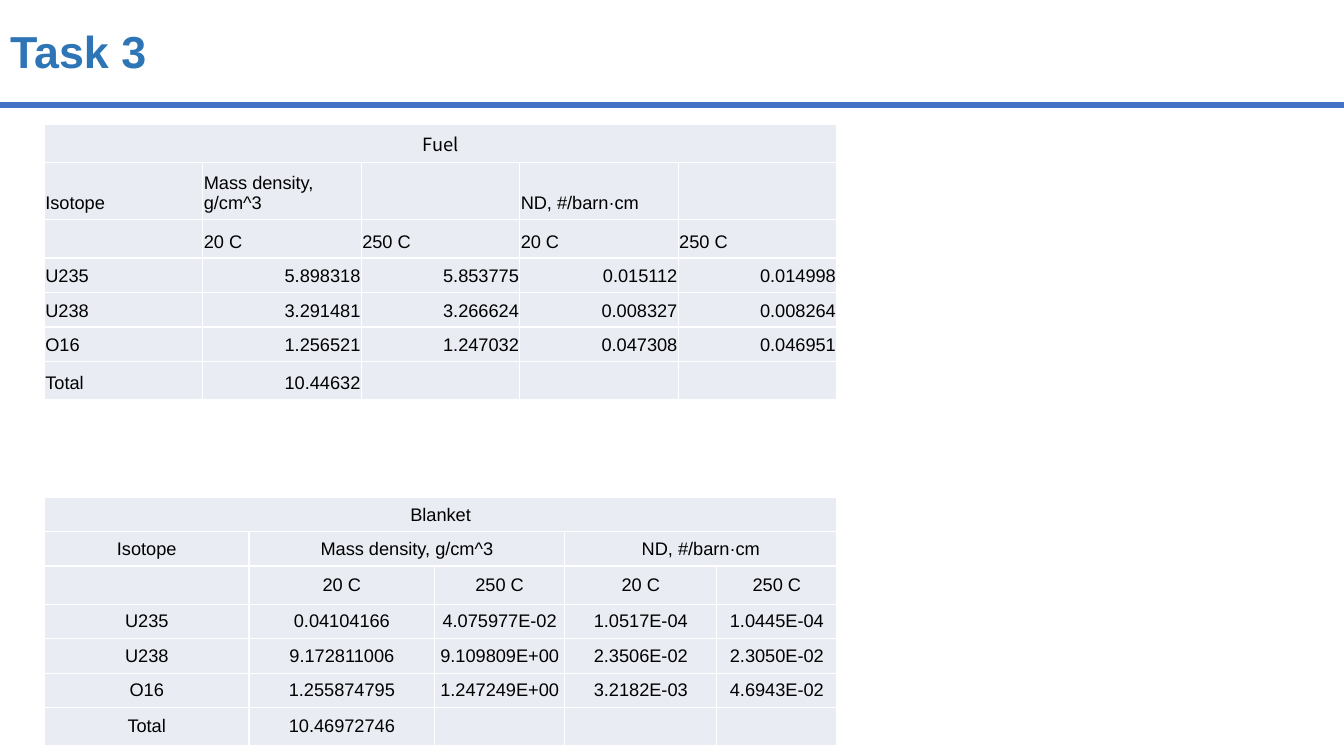
from lxml import etree
from pptx import Presentation
from pptx.dml.color import RGBColor
from pptx.enum.shapes import MSO_CONNECTOR
from pptx.enum.text import MSO_ANCHOR as Anchor, MSO_AUTO_SIZE, PP_ALIGN as Align
from pptx.oxml import parse_xml
from pptx.oxml.ns import nsdecls, qn
from pptx.util import Inches, Pt


def color(value):
    return RGBColor.from_string(value)


def style_cell(cell, text, align, anchor, font_name):
    """Write the text and apply the pale fill and thin white borders."""
    cell.margin_left = cell.margin_right = Inches(0.01)
    cell.margin_top = cell.margin_bottom = Inches(0.06)
    cell.vertical_anchor = anchor
    paragraph = cell.text_frame.paragraphs[0]
    if text:
        paragraph.text = text
    paragraph.alignment = align
    paragraph.font.size = Pt(13)
    paragraph.font.name = font_name
    paragraph.font.color.rgb = color("000000")
    properties = cell._tc.get_or_add_tcPr()
    for side in ("lnL", "lnR", "lnT", "lnB"):
        properties.append(parse_xml(
            f'<a:{side} {nsdecls("a")} w="{Pt(0.96)}"><a:solidFill>'
            f'<a:srgbClr val="FFFFFF"/></a:solidFill></a:{side}>'))
    cell.fill.solid()
    cell.fill.fore_color.rgb = color("E9ECF3")


presentation = Presentation()
presentation.slide_width = Inches(13.33)
presentation.slide_height = Inches(7.5)
slide = presentation.slides.add_slide(presentation.slide_layouts[5])

title = slide.shapes.title
title.left, title.top = Inches(0), Inches(0.29)
title.width, title.height = Inches(10), Inches(0.58)
title.text_frame.text = "Task 3"
title.text_frame.auto_size = MSO_AUTO_SIZE.NONE
title.text_frame.vertical_anchor = Anchor.TOP
heading = title.text_frame.paragraphs[0]
heading.alignment = Align.LEFT
heading.line_spacing = 0.8
heading.space_before = Pt(10)
heading.font.size = Pt(32)
heading.font.bold = True
heading.font.name = "Arial"
heading.font.color.rgb = color("2E75B6")

rule = slide.shapes.add_connector(
    MSO_CONNECTOR.STRAIGHT, Inches(0), Inches(1.04), Inches(13.33), Inches(1.04))
rule.line.color.rgb = color("4472C4")
rule.line.width = Pt(4.5)
etree.SubElement(rule._element.spPr, qn("a:effectLst"))

row_height = 2.4 / 7
headers = [
    ["Isotope", "Mass density, g/cm^3", "", "ND, #/barn·cm", ""],
    ["", "20 C", "250 C", "20 C", "250 C"],
]
blanket = {
    "name": "Blanket", "title_font": "Arial", "top": 4.93,
    "columns": [2.03, 1.84, 1.29, 1.51, 1.19],
    "heights": [row_height] * 2 + [0.38] + [row_height] * 3 + [0.37],
    "anchor": Anchor.MIDDLE, "label_align": Align.CENTER, "value_align": Align.CENTER,
    "header_spans": [(1, 2), (3, 4)],
    "values": [
        ["U235", "0.04104166", "4.075977E-02", "1.0517E-04", "1.0445E-04"],
        ["U238", "9.172811006", "9.109809E+00", "2.3506E-02", "2.3050E-02"],
        ["O16", "1.255874795", "1.247249E+00", "3.2182E-03", "4.6943E-02"],
        ["Total", "10.46972746", "", "", ""],
    ],
}
fuel = {
    "name": "Fuel", "title_font": "Noto Sans CJK SC", "top": 1.23,
    "columns": [7.86 / 5] * 5,
    "heights": [0.38, 0.57, 0.38] + [row_height] * 3 + [0.38],
    "anchor": Anchor.BOTTOM, "label_align": Align.LEFT, "value_align": Align.RIGHT,
    "header_spans": [],
    "values": [
        ["U235", "5.898318", "5.853775", "0.015112", "0.014998"],
        ["U238", "3.291481", "3.266624", "0.008327", "0.008264"],
        ["O16", "1.256521", "1.247032", "0.047308", "0.046951"],
        ["Total", "10.44632", "", "", ""],
    ],
}

for data in (blanket, fuel):
    rows = [[data["name"], "", "", "", ""]] + headers + data["values"]
    table = slide.shapes.add_table(
        len(rows), 5, Inches(0.44), Inches(data["top"]),
        Inches(7.86), Inches(sum(data["heights"]))).table
    table.first_row = table.horz_banding = False
    for column, width in zip(table.columns, data["columns"]):
        column.width = Inches(width)
    for row, height in zip(table.rows, data["heights"]):
        row.height = Inches(height)

    table.cell(0, 0).merge(table.cell(0, 4))
    for first, last in data["header_spans"]:
        table.cell(1, first).merge(table.cell(1, last))

    for row_index, texts in enumerate(rows):
        for column_index, text in enumerate(texts):
            align, anchor, font_name = data["label_align"], data["anchor"], "Arial"
            if row_index == 0:
                align, anchor, font_name = Align.CENTER, Anchor.BOTTOM, data["title_font"]
            elif row_index > len(headers) and column_index > 0:
                align = data["value_align"]
            style_cell(table.cell(row_index, column_index), text, align, anchor, font_name)

presentation.save("out.pptx")
